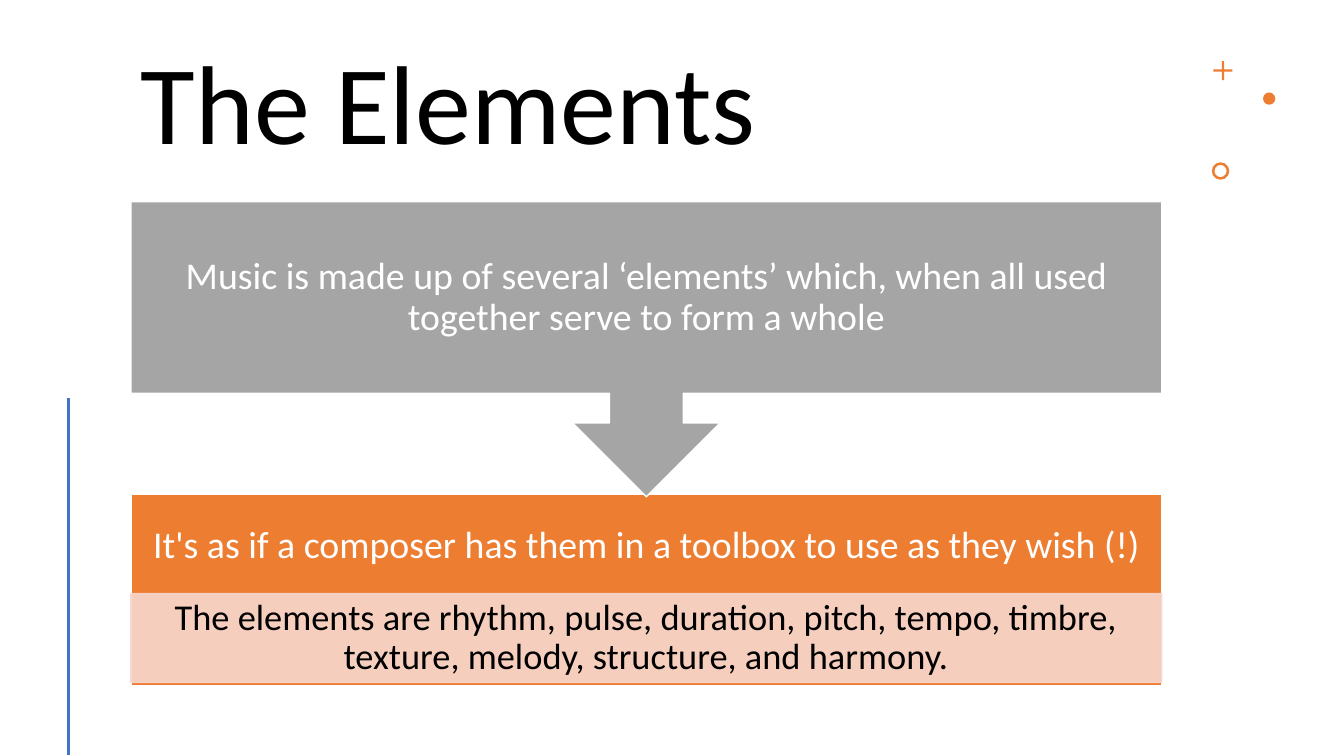
from dataclasses import dataclass

from lxml.etree import SubElement
from pptx import Presentation
from pptx.dml.color import RGBColor
from pptx.enum.shapes import MSO_CONNECTOR, MSO_SHAPE
from pptx.enum.text import MSO_ANCHOR, MSO_AUTO_SIZE, PP_ALIGN
from pptx.oxml.ns import qn
from pptx.util import Cm, Pt


@dataclass(frozen=True)
class Theme:
    font: str = "Calibri"
    black: str = "000000"
    white: str = "FFFFFF"
    grey: str = "A5A5A5"
    orange: str = "ED7D31"
    pink: str = "F8D7CE"
    blue: str = "4472C4"
    title_size: int = 80
    step_size: int = 27
    detail_size: int = 26


theme = Theme()


def write_text(shape, text, size, color, align=PP_ALIGN.CENTER, margins=(0.25, 0.13, 0.25, 0.13)):
    frame = shape.text_frame
    frame.word_wrap = True
    frame.auto_size = MSO_AUTO_SIZE.NONE
    frame.vertical_anchor = MSO_ANCHOR.MIDDLE
    frame.margin_left, frame.margin_top, frame.margin_right, frame.margin_bottom = map(Cm, margins)
    paragraph = frame.paragraphs[0]
    paragraph.alignment = align
    paragraph.line_spacing = 0.9
    run = paragraph.add_run()
    run.text = text
    run.font.name = theme.font
    run.font.size = Pt(size)
    run.font.color.rgb = RGBColor.from_string(color)


def draw_shape(kind, left, top, width, height, fill, outline=None):
    shape = slide.shapes.add_shape(kind, Cm(left), Cm(top), Cm(width), Cm(height))
    shape.shadow.inherit = False
    shape.fill.solid()
    shape.fill.fore_color.rgb = RGBColor.from_string(fill)
    if outline:
        shape.line.color.rgb = RGBColor.from_string(outline)
        shape.line.width = Pt(1)
    else:
        shape.line.fill.background()
    return shape


presentation = Presentation()
presentation.slide_width = Cm(33.87)
presentation.slide_height = Cm(19.05)
slide = presentation.slides.add_slide(presentation.slide_layouts[5])

column_left, column_width = 3.3, 25.98

title = slide.shapes.title
title.left, title.top = Cm(column_left), Cm(1.07)
title.width, title.height = Cm(column_width), Cm(3.33)
write_text(title, "The Elements", theme.title_size, theme.black, align=PP_ALIGN.LEFT)

plus = draw_shape(MSO_SHAPE.CROSS, 30.58, 1.54, 0.48, 0.48, theme.orange)
plus.adjustments[0] = 0.44
draw_shape(MSO_SHAPE.OVAL, 31.83, 2.33, 0.31, 0.31, theme.orange)
ring = draw_shape(MSO_SHAPE.DONUT, 30.54, 4.09, 0.44, 0.44, theme.orange)
ring.adjustments[0] = 0.15

side_line = slide.shapes.add_connector(
    MSO_CONNECTOR.STRAIGHT, Cm(1.73), Cm(10.03), Cm(1.73), Cm(19.03)
)
side_line.line.color.rgb = RGBColor.from_string(theme.blue)
side_line.line.width = Pt(2)
SubElement(side_line._element.spPr, qn("a:effectLst"))

toolbox = draw_shape(
    MSO_SHAPE.RECTANGLE, column_left, 12.45, column_width, 4.83, theme.orange, theme.white
)
write_text(
    toolbox,
    "It's as if a composer has them in a toolbox to use as they wish (!)",
    theme.step_size,
    theme.white,
    margins=(0.53, 0.53, 0.53, 2.74),
)

elements = draw_shape(
    MSO_SHAPE.RECTANGLE, column_left, 14.96, column_width, 2.24, theme.pink, theme.pink
)
for color in elements._element.spPr.iter(qn("a:srgbClr")):
    SubElement(color, qn("a:alpha"), val="90000")
write_text(
    elements,
    "The elements are rhythm, pulse, duration, pitch, tempo, timbre, "
    "texture, melody, structure, and harmony.",
    theme.detail_size,
    theme.black,
    margins=(0.51, 0.1, 0.51, 0.1),
)

whole = draw_shape(
    MSO_SHAPE.DOWN_ARROW_CALLOUT, column_left, 5.08, column_width, 7.44, theme.grey, theme.white
)
write_text(
    whole,
    "Music is made up of several ‘elements’ which, when all used together serve to form a whole",
    theme.step_size,
    theme.white,
    margins=(0.53, 0.53, 0.53, 0.53),
)

presentation.save("out.pptx")
